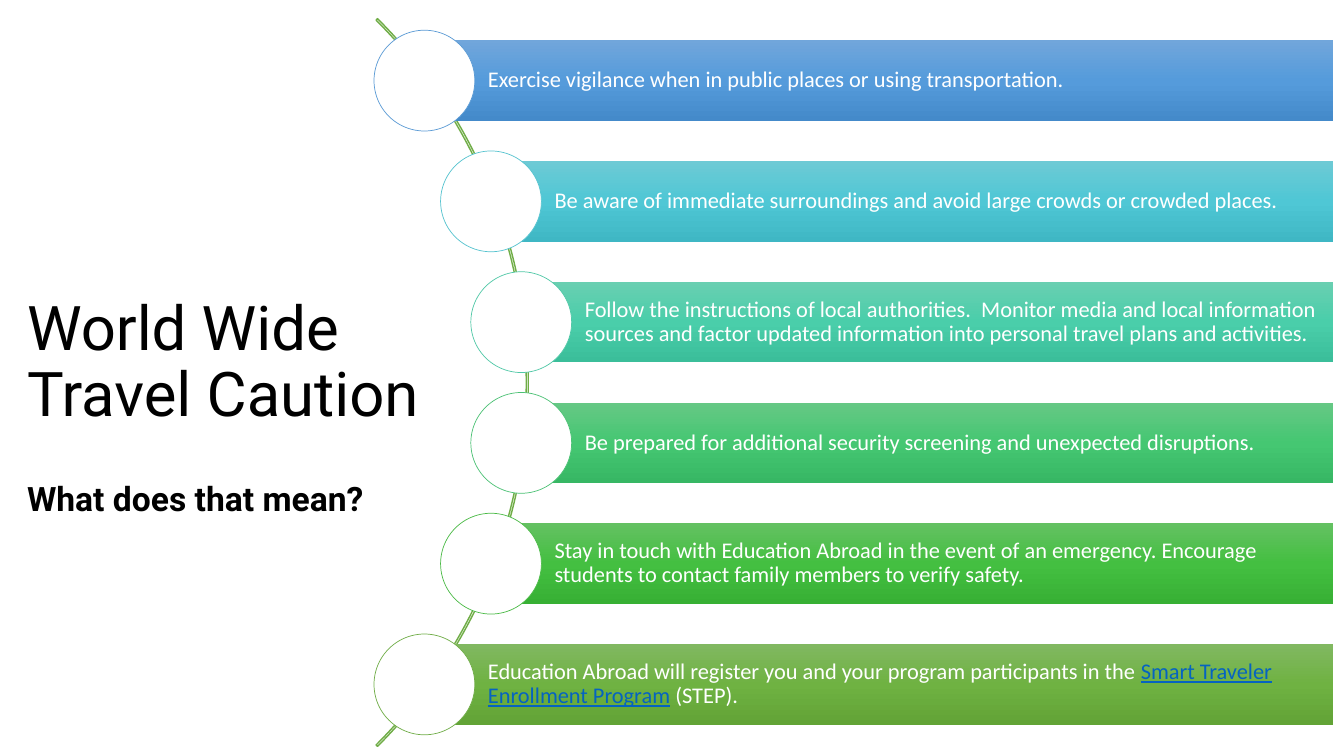
from copy import deepcopy
from dataclasses import dataclass

from pptx import Presentation
from pptx.dml.color import RGBColor
from pptx.enum.shapes import MSO_SHAPE
from pptx.enum.text import MSO_ANCHOR, PP_ALIGN
from pptx.oxml.ns import qn
from pptx.util import Inches, Pt

ARC, BAR, CIRCLE = MSO_SHAPE.BLOCK_ARC, MSO_SHAPE.RECTANGLE, MSO_SHAPE.OVAL
MIDDLE, BOTTOM = MSO_ANCHOR.MIDDLE, MSO_ANCHOR.BOTTOM
LEFT = PP_ALIGN.LEFT


@dataclass
class Theme:
    black: str = "000000"
    white: str = "FFFFFF"
    link: str = "0563C1"
    arc: str = "70AD47"
    heading_font: str = "Roboto"
    body_font: str = "Calibri"
    title_size: int = 44
    subtitle_size: int = 24
    body_size: int = 16
    bars: tuple = (
        ("71A6DB", "559BDB", "448ACA", "5B9BD5"),
        ("6DCAD5", "4FC7D5", "3FB7C4", "55C3CF"),
        ("69CFB1", "4ACEAA", "3BBE9A", "50C8A7"),
        ("66C885", "45C772", "37B764", "4BC174"),
        ("64C162", "44BF41", "37B034", "4ABA46"),
        ("81B861", "6FB242", "62A336", "70AD47"),
    )


theme = Theme()


def add_plain_shape(kind, left, top, width, height):
    shape = slide.shapes.add_shape(
        kind, Inches(left), Inches(top), Inches(width), Inches(height))
    shape.shadow.inherit = False
    return shape


def write_text(shape, parts, font_name, size, anchor, bold=False):
    frame = shape.text_frame
    frame.word_wrap = True
    frame.vertical_anchor = anchor
    paragraph = frame.paragraphs[0]
    paragraph.alignment = LEFT
    paragraph.line_spacing = 0.9
    for text, color in parts:
        run = paragraph.add_run()
        run.text = text
        run.font.name = font_name
        run.font.size = Pt(size)
        run.font.bold = bold
        run.font.underline = color == theme.link
        run.font.color.rgb = RGBColor.from_string(color)


presentation = Presentation()
presentation.slide_width = Inches(13.33)
presentation.slide_height = Inches(7.5)
slide = presentation.slides.add_slide(presentation.slide_layouts[6])

title = slide.shapes.add_textbox(Inches(0.17), Inches(2.88), Inches(4.56), Inches(1.45))
write_text(title, [("World Wide Travel Caution", theme.black)],
           theme.heading_font, theme.title_size, MIDDLE)

subtitle = slide.shapes.add_textbox(Inches(0.17), Inches(4.3), Inches(5.64), Inches(0.9))
write_text(subtitle, [("What does that mean?", theme.black)],
           theme.heading_font, theme.subtitle_size, BOTTOM, bold=True)

arc = add_plain_shape(ARC, -4.97, -1.31, 10.21, 10.21)
for index, value in enumerate((189, 27, 0.002)):
    arc.adjustments[index] = value
arc.fill.background()
arc.line.color.rgb = RGBColor.from_string(theme.arc)
arc.line.width = Pt(1)

advice = [
    [("Exercise vigilance when in public places or using transportation.", theme.white)],
    [("Be aware of immediate surroundings and avoid large crowds or crowded places.",
      theme.white)],
    [("Follow the instructions of local authorities.  Monitor media and local information "
      "sources and factor updated information into personal travel plans and activities.",
      theme.white)],
    [("Be prepared for additional security screening and unexpected disruptions.",
      theme.white)],
    [("Stay in touch with Education Abroad in the event of an emergency. Encourage "
      "students to contact family members to verify safety.", theme.white)],
    [("Education Abroad will register you and your program participants in the ",
      theme.white),
     ("Smart Traveler Enrollment Program", theme.link),
     (" (STEP).", theme.white)],
]
bar_lefts = (4.21, 4.87, 5.17, 5.17, 4.87, 4.21)
bar_right = 13.22
first_top, row_step = 0.4, 1.198
bar_height, circle_size = 0.8, 1

for row, (parts, left, colors) in enumerate(zip(advice, bar_lefts, theme.bars)):
    top = first_top + row * row_step
    bar = add_plain_shape(BAR, left, top, bar_right - left, bar_height)
    bar.line.fill.background()
    bar.fill.gradient()
    bar.fill.gradient_angle = 270
    stop_list = bar.element.spPr.find(".//" + qn("a:gsLst"))
    stop_list.insert(1, deepcopy(stop_list[0]))
    for stop, color, position in zip(bar.fill.gradient_stops, colors, (0, 0.5, 1)):
        stop.color.rgb = RGBColor.from_string(color)
        stop.position = position

    frame = bar.text_frame
    frame.margin_left = Inches(0.63)
    frame.margin_top = frame.margin_right = frame.margin_bottom = Inches(0.04)
    write_text(bar, parts, theme.body_font, theme.body_size, MIDDLE)

    circle = add_plain_shape(CIRCLE, left - circle_size / 2,
                             top + (bar_height - circle_size) / 2,
                             circle_size, circle_size)
    circle.fill.solid()
    circle.fill.fore_color.rgb = RGBColor.from_string(theme.white)
    circle.line.color.rgb = RGBColor.from_string(colors[3])
    circle.line.width = Pt(0.5)

presentation.save("out.pptx")
